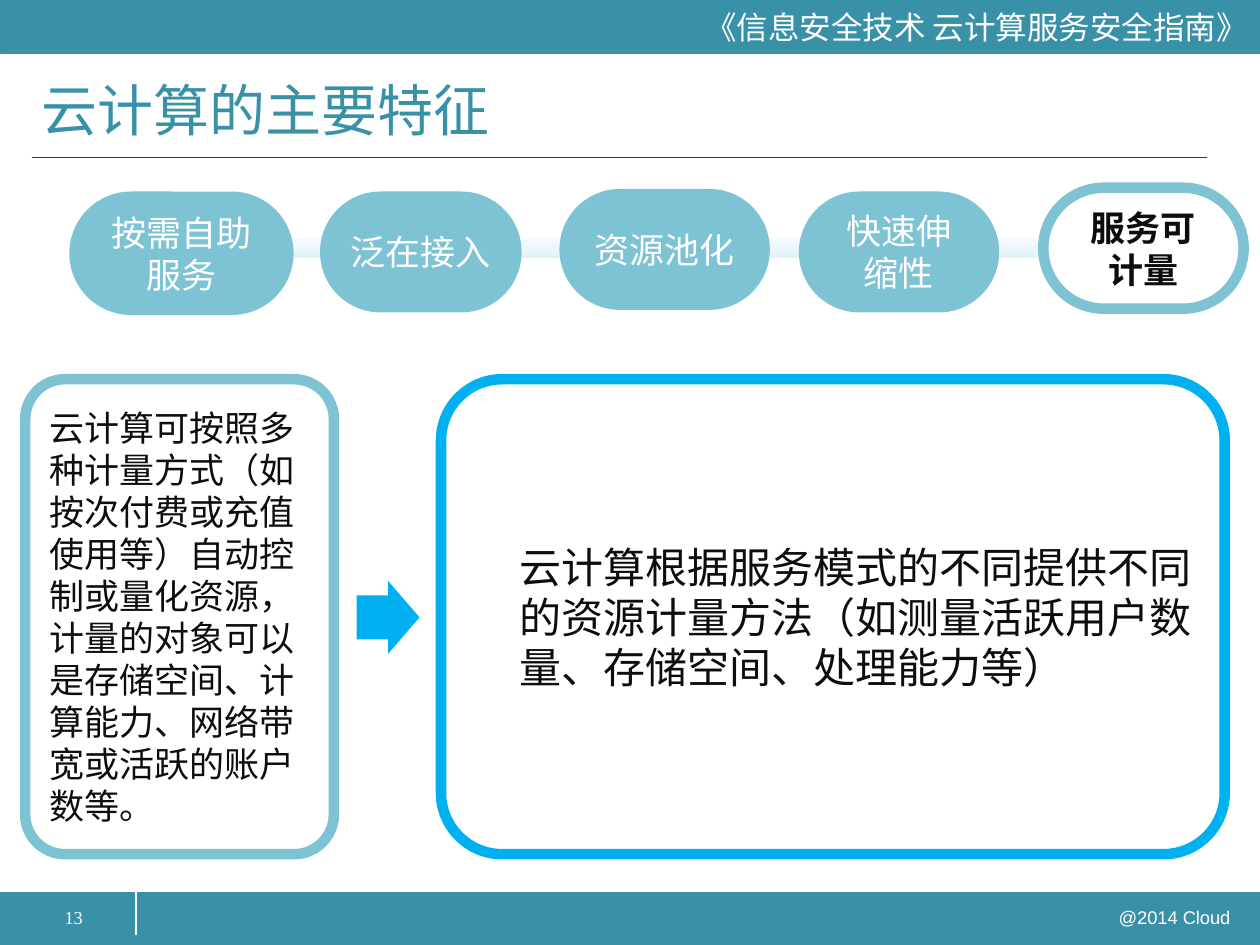
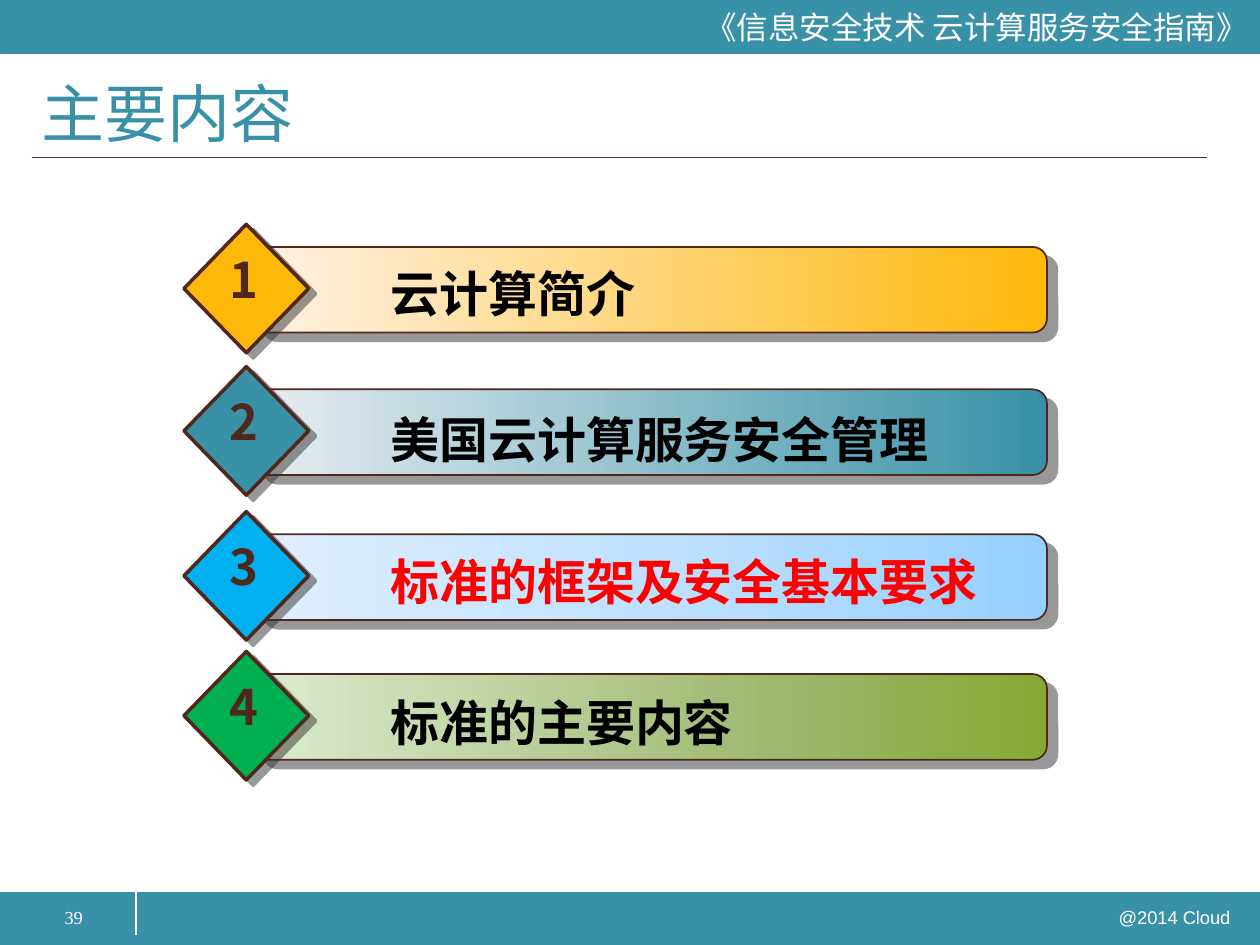
from lxml.etree import SubElement
from pptx import Presentation
from pptx.dml.color import RGBColor
from pptx.enum.shapes import MSO_CONNECTOR as Connector, MSO_SHAPE as Shape
from pptx.enum.text import MSO_ANCHOR as Anchor, PP_ALIGN as Align
from pptx.oxml.ns import qn
from pptx.util import Inches, Pt

WIDTH, HEIGHT, BAND = 10, 7.5, 0.42
CJK, LATIN, SERIF = "Noto Sans CJK SC", "Arial", "Times New Roman"
COLORS = {
    "teal": "3891A7", "pale_teal": "7EC3D4", "sky": "00B0F0", "white": "FFFFFF",
    "ink": "0D0D0D", "black": "000000", "red": "FF0000", "rule": "5E2E21",
    "brown": "4F271C", "amber": "FEB80A", "green": "00B050", "shadow": "333333",
}

HEADER = "《信息安全技术 云计算服务安全指南》"
FOOTER = "@2014 Cloud"

FEATURES = {
    "title": "云计算的主要特征", "title_size": 32, "page": "13",
    "pills": [
        ("按需自助服务", 0.55, 1.52, 1.78, 0.98),
        ("泛在接入", 2.54, 1.52, 1.6, 0.96),
        ("资源池化", 4.44, 1.5, 1.67, 0.96),
        ("快速伸缩性", 6.34, 1.52, 1.59, 0.96),
        ("服务可计量", 8.28, 1.49, 1.59, 0.96),
    ],
    "current": "服务可计量",
    "link": [(0, "E0F2F9"), (35, "E8F5FB"), (100, "F5FBFE")],
    "panels": [
        ("云计算可按照多种计量方式（如按次付费或充值使用等）自动控制或量化资源，"
         "计量的对象可以是存储空间、计算能力、网络带宽或活跃的账户数等。",
         0.2, 2.45, "pale_teal", 20, 0),
        ("云计算根据服务模式的不同提供不同的资源计量方法"
         "（如测量活跃用户数量、存储空间、处理能力等）",
         3.5, 6.22, "sky", 24, 0.38),
    ],
}

AGENDA = {
    "title": "主要内容", "title_size": 36, "page": "39",
    "rows": [
        ("云计算简介", 1.96, 2.04, "amber", "black", 0,
         [(0, "FFF2E6"), (100, "FEB80A")]),
        ("美国云计算服务安全管理", 3.09, 3.2, "teal", "black", 0,
         [(0, "E7EDF0"), (100, "3891A7")]),
        ("标准的框架及安全基本要求", 4.24, 4.33, "sky", "red", 180,
         [(0, "96D0FF"), (50, "BFE1FF"), (100, "E0EFFF")]),
        ("标准的主要内容", 5.35, 5.45, "green", "black", 0,
         [(0, "DDEBCF"), (66, "9CB86E"), (100, "84AA33")]),
    ],
}


def rgb(name):
    return RGBColor.from_string(COLORS[name])


def write(sp, text, size, color, font=CJK, bold=False, align=Align.LEFT,
          anchor=Anchor.TOP):
    tf = sp.text_frame
    tf.word_wrap = True
    tf.vertical_anchor = anchor
    tf.text = text
    p = tf.paragraphs[0]
    p.alignment = align
    r = p.runs[0]
    r.font.size, r.font.bold, r.font.name = Pt(size), bold, font
    r.font.color.rgb = rgb(color)
    SubElement(r.font._element, qn("a:ea"), typeface=CJK)
    return p


def add_text(s, box, *args, **kwargs):
    sp = s.shapes.add_textbox(*map(Inches, box))
    return sp, write(sp, *args, **kwargs)


def add_shape(s, kind, box, fill=None, line=None, width=1, adj=()):
    sp = s.shapes.add_shape(kind, *map(Inches, box))
    sp.shadow.inherit = False
    for i, value in enumerate(adj):
        sp.adjustments[i] = value
    if fill:
        sp.fill.solid()
        sp.fill.fore_color.rgb = rgb(fill)
    else:
        sp.fill.background()
    if line:
        sp.line.color.rgb = rgb(line)
        sp.line.width = Pt(width)
    else:
        sp.line.fill.background()
    return sp


def add_line(s, start, end, color):
    line = s.shapes.add_connector(Connector.STRAIGHT, *map(Inches, start + end))
    line.line.color.rgb = rgb(color)
    line.line.width = Pt(0.75)
    SubElement(line._element.spPr, qn("a:effectLst"))


def set_gradient(sp, stops, angle):
    spPr = sp._element.spPr
    old = spPr.find(qn("a:noFill"))
    grad = SubElement(spPr, qn("a:gradFill"), rotWithShape="1")
    spPr.replace(old, grad)
    stop_list = SubElement(grad, qn("a:gsLst"))
    for pos, color in stops:
        gs = SubElement(stop_list, qn("a:gs"), pos=str(pos * 1000))
        SubElement(gs, qn("a:srgbClr"), val=color)
    SubElement(grad, qn("a:lin"), ang=str(angle * 60000), scaled="0")


def set_shadow(sp, distance, angle):
    effects = sp._element.spPr.find(qn("a:effectLst"))
    shadow = SubElement(effects, qn("a:outerShdw"), dist=str(Pt(distance)),
                        dir=str(angle * 60000), algn="ctr", rotWithShape="0")
    color = SubElement(shadow, qn("a:srgbClr"), val=COLORS["shadow"])
    SubElement(color, qn("a:alpha"), val="50000")


def add_slide(prs, content):
    s = prs.slides.add_slide(prs.slide_layouts[6])
    foot = HEIGHT - BAND
    add_shape(s, Shape.RECTANGLE, (0, foot, WIDTH, BAND), "teal", "teal", 0.25)
    head = add_shape(s, Shape.RECTANGLE, (0, 0, WIDTH, BAND), "teal", "teal", 0.25)
    write(head, HEADER, 18, "white", LATIN, align=Align.RIGHT, anchor=Anchor.MIDDLE)
    add_line(s, (1.08, foot), (1.08, 7.42), "white")
    add_text(s, (8.78, 7.14, 1.14, 0.28), FOOTER, 10.5, "white", LATIN)
    add_line(s, (0.25, 1.25), (9.58, 1.25), "rule")
    title, p = add_text(s, (0.23, 0.66, 9.18, 0.55), content["title"],
                        content["title_size"], "teal", LATIN)
    title.text_frame.margin_top = 0
    p.line_spacing = 0.9
    add_text(s, (0.17, 7.14, 0.83, 0.31), content["page"], 10.5, "white", SERIF,
             align=Align.CENTER)
    return s


def build_features(prs):
    s = add_slide(prs, FEATURES)
    link = add_shape(s, Shape.RECTANGLE, (2.31, 1.89, 6.1, 0.16))
    set_gradient(link, FEATURES["link"], 270)
    for label, *box in FEATURES["pills"]:
        current = label == FEATURES["current"]
        fill, line, color = (("white", "pale_teal", "ink") if current
                             else ("pale_teal", None, "white"))
        pill = add_shape(s, Shape.ROUNDED_RECTANGLE, box, fill, line, 6, [0.5])
        write(pill, label, 20, color, bold=current, align=Align.CENTER,
              anchor=Anchor.MIDDLE)
    for text, left, width, line, size, indent in FEATURES["panels"]:
        panel = add_shape(s, Shape.ROUNDED_RECTANGLE, (left, 3.01, width, 3.77),
                          None, line, 6, [0.129])
        p = write(panel, text, size, "ink", anchor=Anchor.MIDDLE)
        p._p.get_or_add_pPr().set("marL", str(Inches(indent)))
    add_shape(s, Shape.RIGHT_ARROW, (2.83, 4.61, 0.5, 0.58), "sky", adj=[0.6, 0.5])


def build_agenda(prs):
    s = add_slide(prs, AGENDA)
    for number, row in enumerate(AGENDA["rows"], 1):
        label, top, label_top, fill, color, angle, stops = row
        bar = add_shape(s, Shape.ROUNDED_RECTANGLE, (2.01, top, 6.3, 0.68),
                        None, "brown", 1, [0.167])
        set_gradient(bar, stops, angle)
        set_shadow(bar, 7.8, 40)
        diamond = add_shape(s, Shape.DIAMOND, (1.46, top - 0.18, 0.99, 1.02),
                            fill, "brown", 2)
        set_shadow(diamond, 5, 37)
        add_text(s, (3, label_top, 5.15, 0.57), label, 28, color, bold=True)
        add_text(s, (1.69, top - 0.03, 0.5, 0.57), str(number), 28, "brown",
                 bold=True, align=Align.CENTER)


def main():
    prs = Presentation()
    prs.slide_width, prs.slide_height = Inches(WIDTH), Inches(HEIGHT)
    build_features(prs)
    build_agenda(prs)
    prs.save("out.pptx")


if __name__ == "__main__":
    main()
